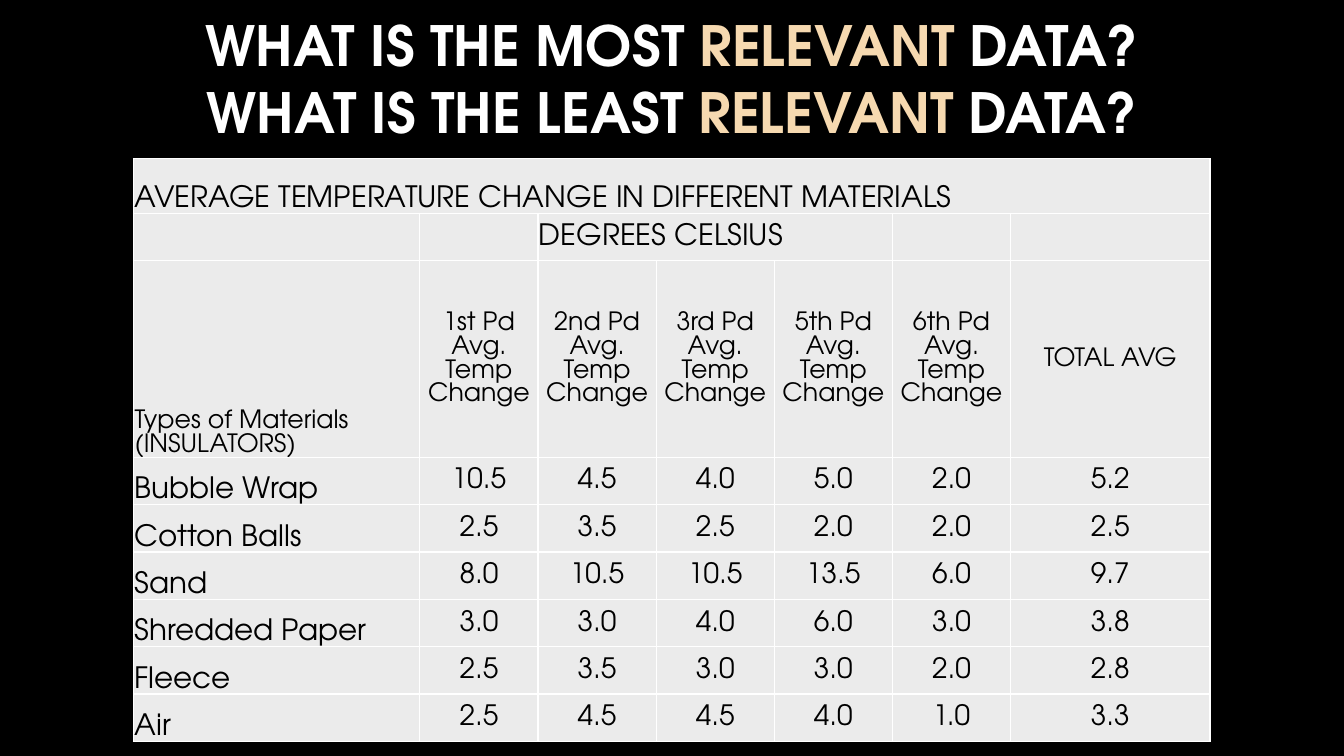
from dataclasses import dataclass

from lxml import etree
from pptx import Presentation
from pptx import util as u
from pptx.dml.color import RGBColor
from pptx.enum import text
from pptx.oxml import ns


@dataclass(frozen=True)
class Theme:
    font: str = "TeX Gyre Adventor"
    background: str = "000000"
    title: str = "FFFFFF"
    accent: str = "F6D9B0"
    cell: str = "EBEBEB"
    border: str = "FFFFFF"
    ink: str = "000000"
    title_size: float = 39.6
    label_size: float = 21
    header_size: float = 18
    value_size: float = 20


@dataclass(frozen=True)
class CellStyle:
    size: float
    anchor: text.MSO_ANCHOR
    align: text.PP_ALIGN


@dataclass(frozen=True)
class Material:
    name: str
    averages: tuple[float, ...]


THEME = Theme()
BOTTOM, MIDDLE = text.MSO_ANCHOR.BOTTOM, text.MSO_ANCHOR.MIDDLE
LEFT, CENTER = text.PP_ALIGN.LEFT, text.PP_ALIGN.CENTER

LABEL = CellStyle(THEME.label_size, BOTTOM, LEFT)
UNIT = CellStyle(THEME.label_size, MIDDLE, LEFT)
CORNER = CellStyle(THEME.header_size, BOTTOM, LEFT)
HEADER = CellStyle(THEME.header_size, MIDDLE, CENTER)
VALUE = CellStyle(THEME.value_size, MIDDLE, CENTER)

PERIODS = ("1st", "2nd", "3rd", "5th", "6th")
MATERIALS = (
    Material("Bubble Wrap", (10.5, 4.5, 4.0, 5.0, 2.0, 5.2)),
    Material("Cotton Balls", (2.5, 3.5, 2.5, 2.0, 2.0, 2.5)),
    Material("Sand", (8.0, 10.5, 10.5, 13.5, 6.0, 9.7)),
    Material("Shredded Paper", (3.0, 3.0, 4.0, 6.0, 3.0, 3.8)),
    Material("Fleece", (2.5, 3.5, 3.0, 3.0, 2.0, 2.8)),
    Material("Air", (2.5, 4.5, 4.5, 4.0, 1.0, 3.3)),
)
COLUMN_WIDTHS = (204.5, *[84.4] * len(PERIODS), 142.5)
ROW_HEIGHTS = (38.9, 33.85, 140.4, *[33.85] * len(MATERIALS))


def style_font(font, size: float, color: str, bold: bool = False) -> None:
    font.name = THEME.font
    font.size = u.Pt(size)
    font.bold = bold
    font.color.rgb = RGBColor.from_string(color)


def add_title(slide) -> None:
    shape = slide.shapes.add_textbox(u.Pt(0), u.Pt(-19.5), u.Pt(960), u.Pt(150))
    frame = shape.text_frame
    frame.word_wrap = True
    frame.vertical_anchor = MIDDLE
    for index, degree in enumerate(("MOST", "LEAST")):
        paragraph = frame.add_paragraph() if index else frame.paragraphs[0]
        paragraph.alignment = CENTER
        for words, color in (
            (f"WHAT IS THE {degree} ", THEME.title),
            ("RELEVANT", THEME.accent),
            (" DATA?", THEME.title),
        ):
            run = paragraph.add_run()
            run.text = words
            style_font(run.font, THEME.title_size, color, bold=True)


def format_cell(cell) -> None:
    cell.fill.solid()
    cell.fill.fore_color.rgb = RGBColor.from_string(THEME.cell)
    cell.margin_left = cell.margin_right = cell.margin_top = u.Pt(0.7)
    cell.margin_bottom = u.Pt(0)
    # Border lines come before the fill in the cell properties
    properties = cell._tc.get_or_add_tcPr()
    for index, side in enumerate(("lnL", "lnR", "lnT", "lnB")):
        line = etree.Element(ns.qn(f"a:{side}"), w=str(u.Pt(1)))
        fill = etree.SubElement(line, ns.qn("a:solidFill"))
        etree.SubElement(fill, ns.qn("a:srgbClr"), val=THEME.border)
        properties.insert(index, line)


def write_cell(cell, words: str, style: CellStyle) -> None:
    cell.text_frame.text = words
    cell.vertical_anchor = style.anchor
    paragraph = cell.text_frame.paragraphs[0]
    paragraph.alignment = style.align
    style_font(paragraph.runs[0].font, style.size, THEME.ink)


def add_temperature_table(slide) -> None:
    shape = slide.shapes.add_table(
        len(ROW_HEIGHTS), len(COLUMN_WIDTHS), u.Pt(95.4), u.Pt(113.4),
        u.Pt(sum(COLUMN_WIDTHS)), u.Pt(sum(ROW_HEIGHTS)),
    )
    table = shape.table
    for column, width in zip(table.columns, COLUMN_WIDTHS):
        column.width = u.Pt(width)
    for row, height in zip(table.rows, ROW_HEIGHTS):
        row.height = u.Pt(height)
    for cell in table.iter_cells():
        format_cell(cell)

    # Heading rows
    table.cell(0, 0).merge(table.cell(0, len(COLUMN_WIDTHS) - 1))
    write_cell(table.cell(0, 0), "AVERAGE TEMPERATURE CHANGE IN DIFFERENT MATERIALS", LABEL)
    table.cell(1, 2).merge(table.cell(1, 4))
    write_cell(table.cell(1, 2), "DEGREES CELSIUS", UNIT)

    # Column headers
    write_cell(table.cell(2, 0), "Types of Materials (INSULATORS)", CORNER)
    headers = [f"{period} Pd Avg. Temp Change" for period in PERIODS] + ["TOTAL AVG"]
    for column, header in enumerate(headers, 1):
        write_cell(table.cell(2, column), header, HEADER)

    # One row for each material
    for row, material in enumerate(MATERIALS, 3):
        write_cell(table.cell(row, 0), material.name, LABEL)
        for column, average in enumerate(material.averages, 1):
            write_cell(table.cell(row, column), f"{average:.1f}", VALUE)


def main() -> None:
    presentation = Presentation()
    presentation.slide_width, presentation.slide_height = u.Pt(960), u.Pt(540)
    slide = presentation.slides.add_slide(presentation.slide_layouts[6])
    background = slide.background.fill
    background.solid()
    background.fore_color.rgb = RGBColor.from_string(THEME.background)
    add_temperature_table(slide)
    add_title(slide)
    presentation.save("out.pptx")


if __name__ == "__main__":
    main()
